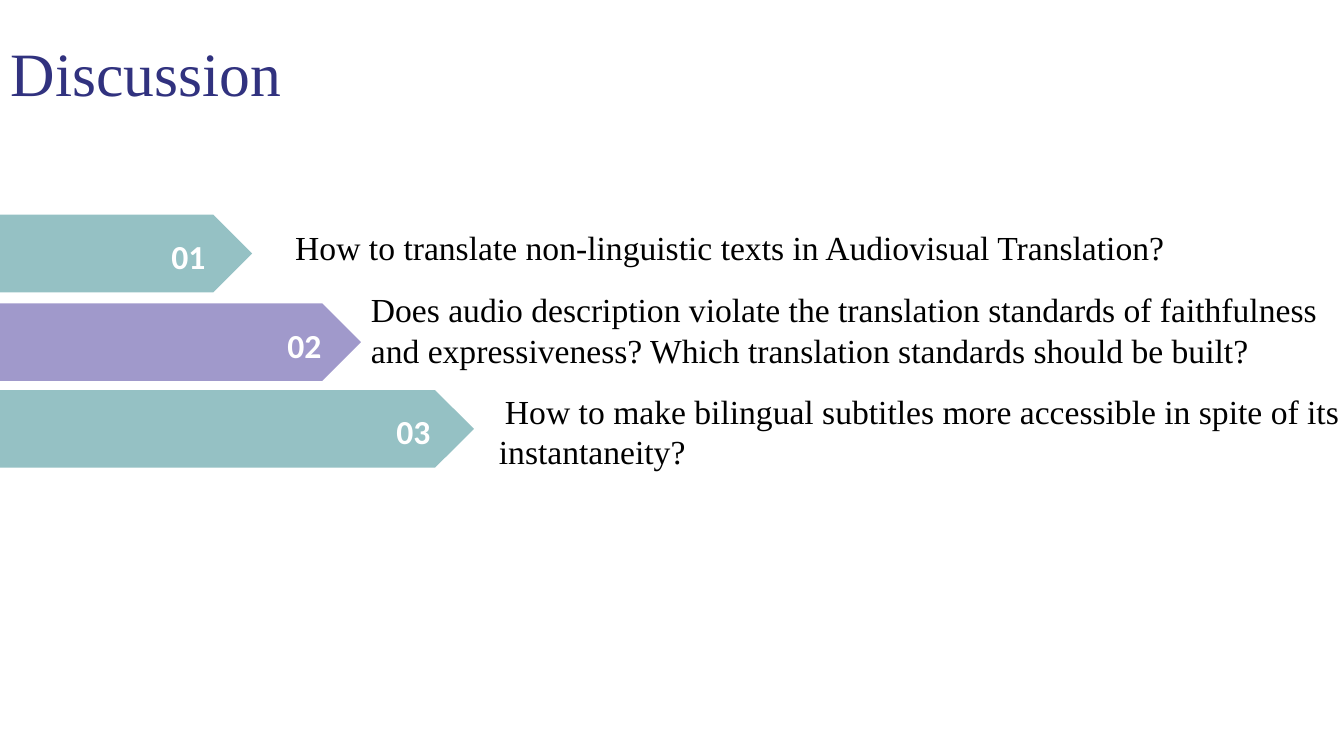
from pptx import Presentation
from pptx.dml.color import RGBColor
from pptx.enum import shapes, text
from pptx import util as u


def color(code):
    return RGBColor.from_string(code)


class Deck:
    scale = 9144
    serif = "Times New Roman"
    sans = "Calibri"
    navy = "31327F"
    teal = "95C1C4"
    lilac = "A099CB"
    black = "000000"
    white = "FFFFFF"

    def __init__(self):
        self.show = Presentation()
        self.show.slide_width = self.px(1333)
        self.show.slide_height = self.px(750)
        self.slide = self.show.slides.add_slide(self.show.slide_layouts[6])

    def px(self, size):
        return u.Emu(size * self.scale)

    def arrow(self, left, top, width, height, fill):
        box = map(self.px, (left, top, width, height))
        shape = self.slide.shapes.add_shape(shapes.MSO_SHAPE.PENTAGON, *box)
        shape.shadow.inherit = False
        shape.fill.solid()
        shape.fill.fore_color.rgb = color(fill)
        shape.line.fill.background()

    def label(self, left, top, width, height, lines, size=24, font=serif,
              ink=black, bold=False, align=text.PP_ALIGN.LEFT,
              wrap=False, indent=0):
        box = map(self.px, (left, top, width, height))
        frame = self.slide.shapes.add_textbox(*box).text_frame
        frame.text = "\n".join(lines)
        frame.word_wrap = wrap
        frame.auto_size = text.MSO_AUTO_SIZE.SHAPE_TO_FIT_TEXT
        for para in frame.paragraphs:
            para.alignment = align
            para.font.size = u.Pt(size)
            para.font.name = font
            para.font.bold = bold
            para.font.color.rgb = color(ink)
            if indent:
                para._p.get_or_add_pPr().set("indent", str(self.px(indent)))

    def number(self, left, top, value):
        self.label(left, top, 54, 50, [f"{value:02}"], font=self.sans,
                   ink=self.white, bold=True, align=text.PP_ALIGN.CENTER)


def main():
    deck = Deck()
    deck.label(1, 30, 291, 84, ["Discussion"], size=44, ink=deck.navy)
    rows = [
        (213, 251, 160, deck.teal),
        (301, 359, 275, deck.lilac),
        (387, 471, 383, deck.teal),
    ]
    for value, (top, width, left, fill) in enumerate(rows, 1):
        deck.arrow(-1, top, width, 77, fill)
        deck.number(left, top + 16, value)
    deck.label(283, 220, 890, 50, [
        "How to translate non-linguistic texts in Audiovisual Translation?"])
    deck.label(358, 282, 975, 91, [
        "Does audio description violate the translation standards of faithfulness",
        "and expressiveness? Which translation standards should be built?",
    ], wrap=True)
    deck.label(485, 383, 869, 91, [
        "How to make bilingual subtitles more accessible in spite of its instantaneity?",
    ], wrap=True, indent=6)
    deck.show.save("out.pptx")


if __name__ == "__main__":
    main()
